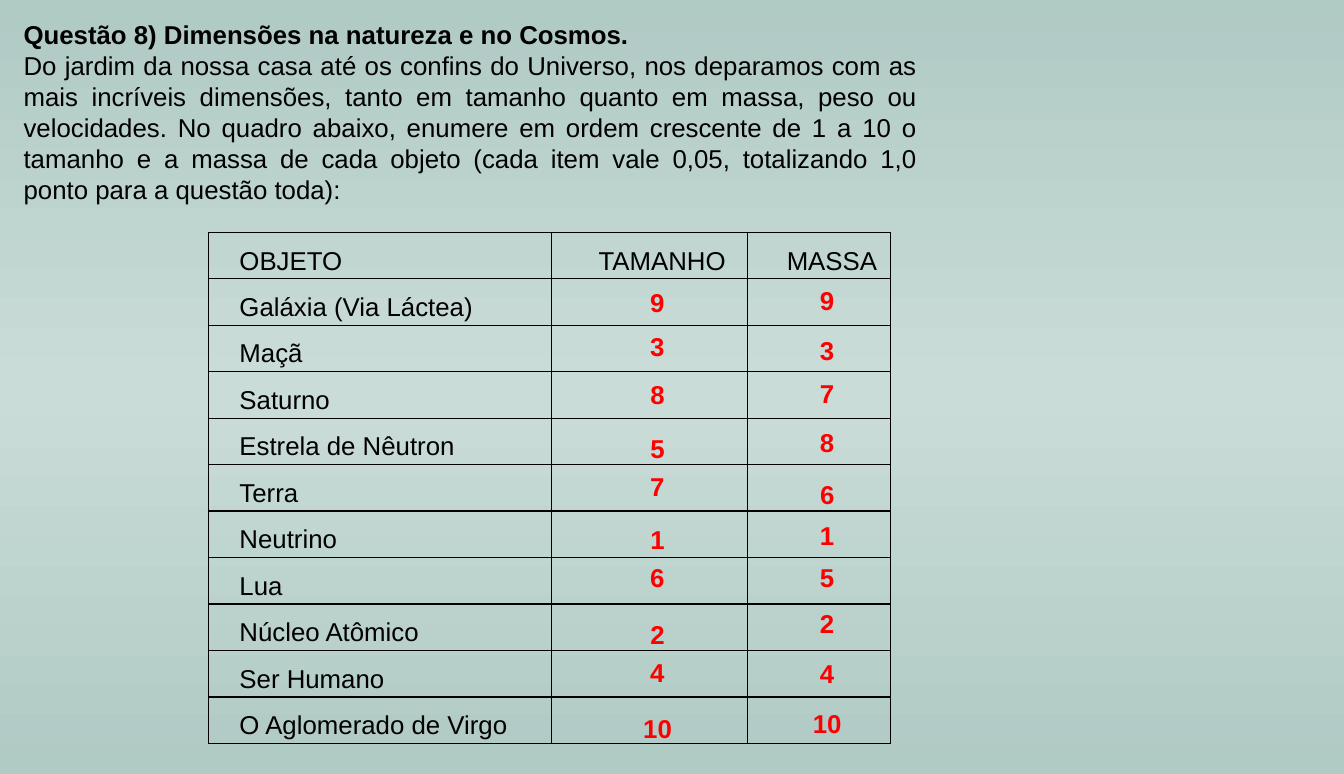
from lxml import etree
from pptx import Presentation
from pptx.dml.color import RGBColor
from pptx.enum.text import MSO_AUTO_SIZE, PP_ALIGN
from pptx.oxml.ns import qn
from pptx.util import Inches, Pt

JUSTIFY, CENTER = PP_ALIGN.JUSTIFY, PP_ALIGN.CENTER
GROW = MSO_AUTO_SIZE.SHAPE_TO_FIT_TEXT

BLACK = RGBColor(0x00, 0x00, 0x00)
RED = RGBColor(0xFF, 0x00, 0x00)
SAGE = RGBColor(0xB0, 0xCA, 0xC4)
MIST = RGBColor(0xCA, 0xDC, 0xD8)

INDENT = 0.25
ROW_HEIGHT = 0.45
COLUMN_WIDTHS = (3.32, 1.9, 1.39)
ANSWER_SHIFT = 0.08

HEADING = "Questão 8) Dimensões na natureza e no Cosmos. "
STATEMENT = (
    "Do jardim da nossa casa até os confins do Universo, nos deparamos com as mais "
    "incríveis dimensões, tanto em tamanho quanto em massa, peso ou velocidades. No "
    "quadro abaixo, enumere em ordem crescente de 1 a 10 o tamanho e a massa de cada "
    "objeto (cada item vale 0,05, totalizando 1,0 ponto para a questão toda):"
)
HEADERS = ("OBJETO", "TAMANHO", "MASSA")
# Each answer: text, offset from the top of its row, whether it is spaced and indented
ROWS = (
    ("Galáxia (Via Láctea)", ("9", 0.03, False), ("9", 0.01, False)),
    ("Maçã", ("3", 0.01, False), ("3", 0.04, False)),
    ("Saturno", ("8", -0.13, True), ("7", 0.01, False)),
    ("Estrela de Nêutron", ("5", -0.06, True), ("8", 0.04, False)),
    ("Terra", ("7", 0.01, False), ("6", -0.06, True)),
    ("Neutrino", ("1", -0.07, True), ("1", 0.04, False)),
    ("Lua", ("6", -0.01, False), ("5", -0.01, False)),
    ("Núcleo Atômico", ("2", -0.05, True), ("2", -0.01, False)),
    ("Ser Humano", ("4", 0.01, False), ("4", 0.02, False)),
    ("O Aglomerado de Virgo", ("10", -0.04, True), ("10", 0.06, False)),
)


def paint_background(slide):
    fill = slide.background.fill
    fill.gradient()
    fill.gradient_angle = 90
    stops = slide.background._cSld.find(".//" + qn("a:gsLst"))
    for stop in list(stops):
        stops.remove(stop)
    for position, color in ((0, SAGE), (50000, MIST), (100000, SAGE)):
        stop = etree.SubElement(stops, qn("a:gs"), pos=str(position))
        etree.SubElement(stop, qn("a:srgbClr"), val=str(color))


def format_paragraph(paragraph, color=BLACK, bold=False, alignment=None):
    paragraph.alignment = alignment
    for run in paragraph.runs:
        run.font.name = "Arial"
        run.font.size = Pt(18)
        run.font.bold = bold
        run.font.color.rgb = color


def space_and_indent(paragraph):
    paragraph.line_spacing = 1.5
    properties = paragraph._p.get_or_add_pPr()
    properties.set("marL", str(Inches(INDENT)))
    properties.set("indent", "0")


def add_text_box(slide, left, top, width, height, wrap):
    box = slide.shapes.add_textbox(*map(Inches, (left, top, width, height)))
    box.text_frame.word_wrap = wrap
    box.text_frame.auto_size = GROW
    return box.text_frame


def add_question(slide, left, top, width, height):
    text_frame = add_text_box(slide, left, top, width, height, True)
    text_frame.text = HEADING + "\n" + STATEMENT
    heading, statement = text_frame.paragraphs
    format_paragraph(heading, bold=True, alignment=JUSTIFY)
    format_paragraph(statement, alignment=JUSTIFY)


def format_cell(cell):
    cell.margin_left = cell.margin_right = Inches(0.05)
    cell.margin_top = cell.margin_bottom = 0
    properties = cell._tc.get_or_add_tcPr()
    for side in ("lnL", "lnR", "lnT", "lnB"):
        line = etree.SubElement(properties, qn("a:" + side), w=str(Pt(1)))
        solid = etree.SubElement(line, qn("a:solidFill"))
        etree.SubElement(solid, qn("a:srgbClr"), val=str(BLACK))
    cell.fill.background()


def add_object_table(slide, left, top):
    count = len(ROWS) + 1
    frame = slide.shapes.add_table(
        count, len(HEADERS), Inches(left), Inches(top),
        Inches(sum(COLUMN_WIDTHS)), Inches(count * ROW_HEIGHT),
    )
    table = frame.table
    table.first_row = table.horz_banding = False
    for column, width in zip(table.columns, COLUMN_WIDTHS):
        column.width = Inches(width)
    for row in table.rows:
        row.height = Inches(ROW_HEIGHT)
    for cell in table.iter_cells():
        format_cell(cell)

    labels = [(0, column, text) for column, text in enumerate(HEADERS)]
    labels += [(row, 0, entry[0]) for row, entry in enumerate(ROWS, 1)]
    for row, column, text in labels:
        cell = table.cell(row, column)
        cell.text_frame.text = text
        paragraph = cell.text_frame.paragraphs[0]
        space_and_indent(paragraph)
        format_paragraph(paragraph, alignment=CENTER if column else JUSTIFY)


def add_answer(slide, center, top, text, spaced):
    width = 0.2 + 0.14 * len(text)
    left = center - width / 2
    if spaced:
        left -= INDENT
        width += INDENT
    text_frame = add_text_box(slide, left, top, width, 0.56 if spaced else 0.4, False)
    text_frame.text = text
    paragraph = text_frame.paragraphs[0]
    if spaced:
        space_and_indent(paragraph)
    format_paragraph(paragraph, RED, True, CENTER if spaced else None)


def add_answers(slide, left, top):
    for row, (_, *answers) in enumerate(ROWS, 1):
        for column, (text, offset, spaced) in enumerate(answers, 1):
            middle = sum(COLUMN_WIDTHS[:column]) + COLUMN_WIDTHS[column] / 2
            add_answer(slide, left + middle + ANSWER_SHIFT,
                       top + row * ROW_HEIGHT + offset, text, spaced)


def main():
    presentation = Presentation()
    presentation.slide_width = Inches(13.02)
    presentation.slide_height = Inches(7.5)
    slide = presentation.slides.add_slide(presentation.slide_layouts[6])
    paint_background(slide)
    add_question(slide, 0.13, 0.13, 8.85, 1.92)
    add_object_table(slide, 2.02, 2.25)
    add_answers(slide, 2.02, 2.25)
    presentation.save("out.pptx")


if __name__ == "__main__":
    main()
